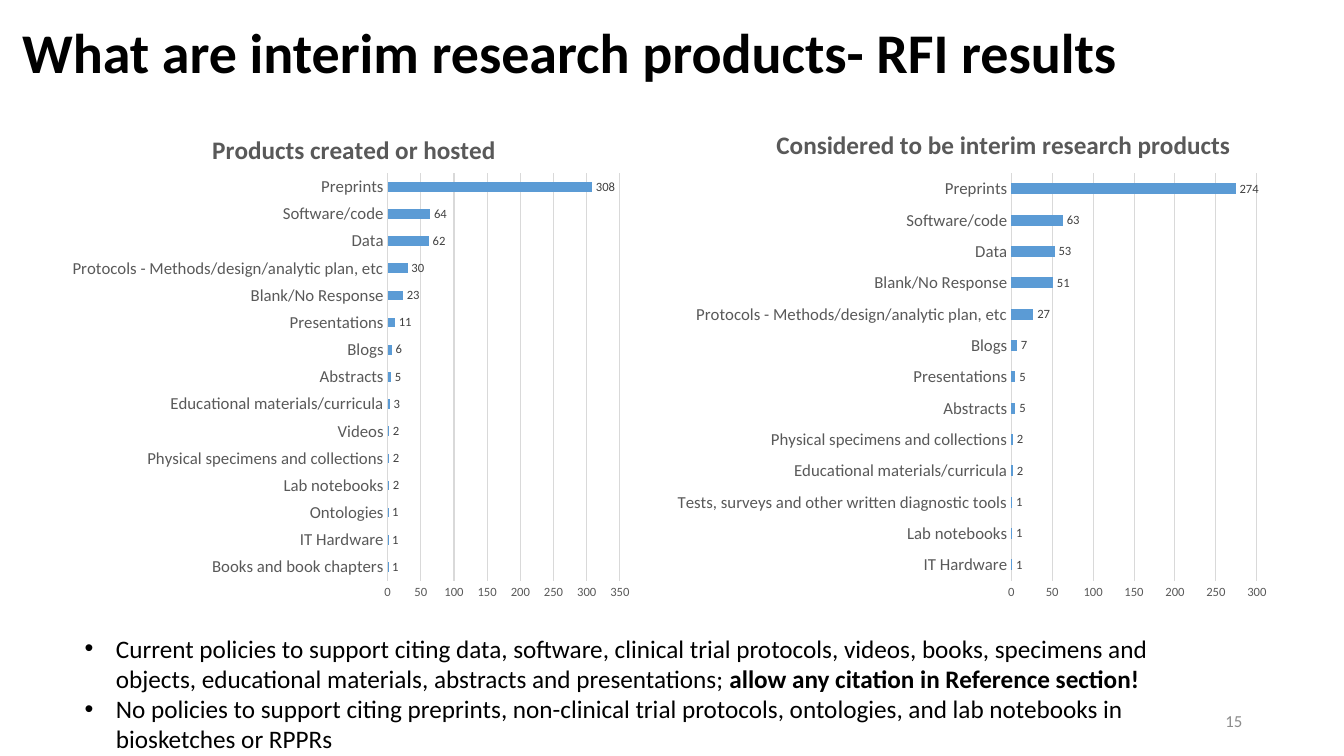
from lxml import etree
from pptx import Presentation
from pptx import util as u
from pptx.chart.data import CategoryChartData
from pptx.dml.color import RGBColor
from pptx.enum import chart as charts, text
from pptx.oxml.ns import qn

COLORS = {"black": "000000", "bar": "5B9BD5", "axis_text": "595959",
          "label": "404040", "grid": "D9D9D9", "page_number": "8C8C8C"}


def style_font(font, size, color, bold=False):
    font.name = "Calibri"
    font.size = u.Pt(size)
    font.bold = bold
    font.color.rgb = RGBColor.from_string(COLORS[color])


def place_in_chart(parent, index, settings):
    """Give a chart title or plot area a manual layout, as child number index."""
    for old in parent.findall(qn("c:layout")):
        parent.remove(old)
    layout = etree.Element(qn("c:layout"))
    manual = etree.SubElement(layout, qn("c:manualLayout"))
    for tag, value in settings.items():
        etree.SubElement(manual, qn(f"c:{tag}")).set("val", str(value))
    parent.insert(index, layout)


presentation = Presentation()
presentation.slide_width = u.Inches(13.33)
presentation.slide_height = u.Inches(7.5)
slide = presentation.slides.add_slide(presentation.slide_layouts[1])

# Title
title = slide.shapes.title
title.left, title.top, title.width, title.height = map(u.Inches, (0.12, 0.08, 11.5, 0.93))
title.text_frame.text = "What are interim research products- RFI results"
title.text_frame.auto_size = text.MSO_AUTO_SIZE.NONE
title.text_frame.vertical_anchor = text.MSO_ANCHOR.MIDDLE
paragraph = title.text_frame.paragraphs[0]
paragraph.alignment = text.PP_ALIGN.LEFT
paragraph.line_spacing = 0.9
style_font(paragraph.font, 40, "black", bold=True)

# Policy bullets
policies = [
    [("Current policies to support citing data, software, clinical trial protocols, videos, "
      "books, specimens and objects, educational materials, abstracts and presentations; ", False),
     ("allow any citation in Reference section!", True)],
    [("No policies to support citing preprints, non-clinical trial protocols, ontologies, "
      "and lab notebooks in biosketches or RPPRs", False)],
]
body = slide.placeholders[1]
body.left, body.top, body.width, body.height = map(u.Inches, (0.74, 6.23, 11.03, 1.31))
body.text_frame.auto_size = text.MSO_AUTO_SIZE.NONE
body.text_frame.vertical_anchor = text.MSO_ANCHOR.TOP
for number, policy in enumerate(policies):
    paragraph = body.text_frame.paragraphs[0] if number == 0 else body.text_frame.add_paragraph()
    paragraph.space_before = u.Pt(0)
    paragraph.line_spacing = 1.0
    style_font(paragraph.font, 18, "black")
    for wording, bold in policy:
        run = paragraph.add_run()
        run.text = wording
        run.font.bold = bold
    properties = paragraph._p.get_or_add_pPr()
    properties.set("marL", str(u.Inches(0.31)))
    properties.set("indent", str(-u.Inches(0.31)))
    etree.SubElement(properties, qn("a:buFont")).set("typeface", "Arial")
    etree.SubElement(properties, qn("a:buChar")).set("char", "•")
    # The schema wants default run properties after the bullet
    properties.append(properties.find(qn("a:defRPr")))

# Bar charts: title, left, width, title position, axis maximum, counts from top to bottom
PROTOCOLS = "Protocols - Methods/design/analytic plan, etc"
surveys = [
    ("Products created or hosted", 0.62, 5.76, (0.25, 0.04), 350, [
        ("Preprints", 308), ("Software/code", 64), ("Data", 62), (PROTOCOLS, 30),
        ("Blank/No Response", 23), ("Presentations", 11), ("Blogs", 6), ("Abstracts", 5),
        ("Educational materials/curricula", 3), ("Videos", 2),
        ("Physical specimens and collections", 2), ("Lab notebooks", 2), ("Ontologies", 1),
        ("IT Hardware", 1), ("Books and book chapters", 1)]),
    ("Considered to be interim research products", 6.62, 6.09, (0.17, 0.03), 300, [
        ("Preprints", 274), ("Software/code", 63), ("Data", 53), ("Blank/No Response", 51),
        (PROTOCOLS, 27), ("Blogs", 7), ("Presentations", 5), ("Abstracts", 5),
        ("Physical specimens and collections", 2), ("Educational materials/curricula", 2),
        ("Tests, surveys and other written diagnostic tools", 1), ("Lab notebooks", 1),
        ("IT Hardware", 1)]),
]
for heading, left, width, (title_x, title_y), maximum, counts in surveys:
    data = CategoryChartData()
    data.categories = [product for product, count in reversed(counts)]
    data.add_series("Series 1", [count for product, count in reversed(counts)])
    chart = slide.shapes.add_chart(
        charts.XL_CHART_TYPE.BAR_CLUSTERED, u.Inches(left), u.Inches(1.07),
        u.Inches(width), u.Inches(4.99), data).chart
    style_font(chart.font, 10, "black")
    chart.has_legend = False

    chart.has_title = True
    chart.chart_title.include_in_layout = False
    chart.chart_title.text_frame.text = heading
    style_font(chart.chart_title.text_frame.paragraphs[0].font, 18, "axis_text", bold=True)
    place_in_chart(chart.chart_title._element, 1, {
        "xMode": "edge", "yMode": "edge", "x": title_x, "y": title_y})
    place_in_chart(chart._chartSpace.chart.plotArea, 0, {
        "layoutTarget": "inner", "xMode": "edge", "yMode": "edge",
        "x": 0.56, "y": 0.13, "w": 0.4, "h": 0.81})

    for axis, size in ((chart.category_axis, 12), (chart.value_axis, 9)):
        axis.major_tick_mark = axis.minor_tick_mark = charts.XL_TICK_MARK.NONE
        style_font(axis.tick_labels.font, size, "axis_text")
    chart.category_axis.has_major_gridlines = False
    chart.value_axis.has_major_gridlines = True
    chart.value_axis.minimum_scale = 0
    chart.value_axis.maximum_scale = maximum
    chart.value_axis.major_unit = 50
    chart.value_axis.format.line.fill.background()
    for line in (chart.category_axis.format.line, chart.value_axis.major_gridlines.format.line):
        line.color.rgb = RGBColor.from_string(COLORS["grid"])
        line.width = u.Pt(0.75)

    plot = chart.plots[0]
    plot.gap_width = 182
    plot.vary_by_categories = False
    bars = plot.series[0]
    bars.format.fill.solid()
    bars.format.fill.fore_color.rgb = RGBColor.from_string(COLORS["bar"])
    labels = bars.data_labels
    labels.show_value = True
    labels.position = charts.XL_LABEL_POSITION.OUTSIDE_END
    style_font(labels.font, 9, "label")

# Page number
page_number = slide.shapes.add_textbox(*map(u.Inches, (9.42, 6.95, 3, 0.4)))
page_number.text_frame.word_wrap = True
page_number.text_frame.vertical_anchor = text.MSO_ANCHOR.MIDDLE
page_number.text_frame.text = "15"
paragraph = page_number.text_frame.paragraphs[0]
paragraph.alignment = text.PP_ALIGN.RIGHT
style_font(paragraph.font, 12, "page_number")

presentation.save("out.pptx")
